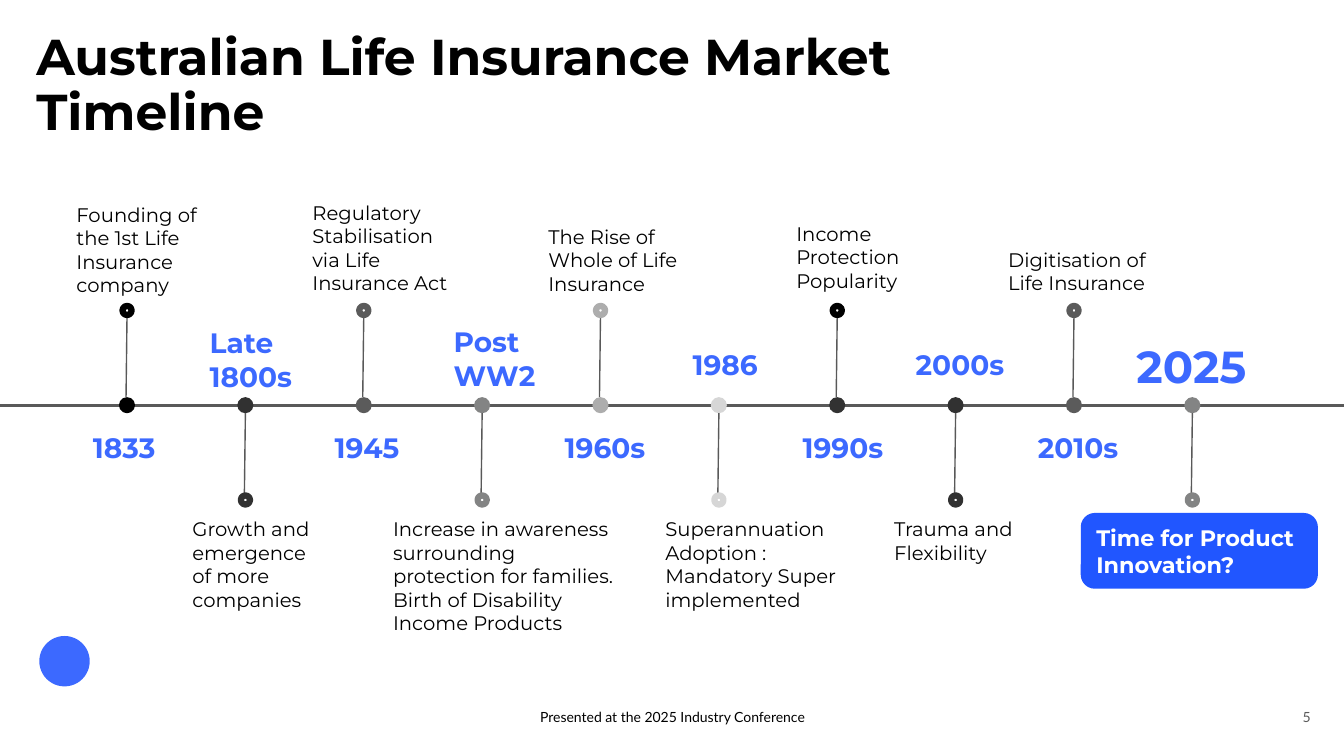
from lxml import etree
from pptx import Presentation
from pptx.dml.color import RGBColor
from pptx.enum.shapes import MSO_CONNECTOR, MSO_SHAPE
from pptx.enum.text import MSO_ANCHOR, PP_ALIGN
from pptx.oxml.ns import qn
from pptx.util import Inches, Pt

STRAIGHT = MSO_CONNECTOR.STRAIGHT
OVAL, ROUNDED = MSO_SHAPE.OVAL, MSO_SHAPE.ROUNDED_RECTANGLE
TOP, MIDDLE, BOTTOM = MSO_ANCHOR.TOP, MSO_ANCHOR.MIDDLE, MSO_ANCHOR.BOTTOM
LEFT, CENTER, RIGHT = PP_ALIGN.LEFT, PP_ALIGN.CENTER, PP_ALIGN.RIGHT

BLUE, BUTTON_BLUE, LINE_GRAY = "3C69FF", "2156FF", "595959"
TITLE = "Australian Life Insurance Market Timeline"
FOOTER = "Presented at the 2025 Industry Conference"
PAGE_NUMBER = "5"
CALLOUT = "Time for Product Innovation?"

MARKERS = [
    ("000000", "000000"), ("313131", "313131"), ("5B5B5B", "5B5B5B"),
    ("838484", "838484"), ("ADADAD", "ADADAD"), ("D6D6D6", "D6D6D6"),
    ("323232", "000000"), ("313131", "313131"), ("5B5B5B", "5B5B5B"),
    ("838484", "838484"),
]
DATES = [
    ("1833", (0.77, 4.22, 0.87, 0.44), RIGHT, 20),
    ("Late\n1800s", (1.98, 3.18, 1.09, 0.77), LEFT, 20),
    ("1945", (3.17, 4.22, 0.89, 0.44), RIGHT, 20),
    ("Post\nWW2", (4.4, 3.17, 1.02, 0.77), LEFT, 20),
    ("1960s", (5.44, 4.22, 1.06, 0.44), RIGHT, 20),
    ("1986", (6.77, 3.4, 0.89, 0.44), LEFT, 20),
    ("1990s", (7.8, 4.22, 1.06, 0.44), RIGHT, 20),
    ("2000s", (8.9, 3.4, 1.16, 0.44), RIGHT, 20),
    ("2010s", (10.12, 4.22, 1.07, 0.44), RIGHT, 20),
    ("2025", (11.06, 3.31, 1.4, 0.64), RIGHT, 32),
]
EVENTS = [
    ("Founding of the 1st Life Insurance company", (0.66, 1.96, 1.6, 1.04)),
    ("Growth and emergence of more companies", (1.81, 5.08, 1.52, 1.04)),
    ("Regulatory Stabilisation via Life Insurance Act", (3, 1.94, 1.6, 1.04)),
    ("Increase in awareness surrounding protection for families.\n"
     "Birth of Disability Income Products", (3.8, 5.08, 2.46, 1.28)),
    ("The Rise of Whole of Life Insurance", (5.34, 2.18, 1.6, 0.81)),
    ("Superannuation Adoption : Mandatory Super implemented",
     (6.5, 5.08, 1.99, 1.04)),
    ("Income Protection Popularity", (7.8, 2.15, 1.6, 0.81)),
    ("Trauma and Flexibility", (8.77, 5.08, 1.38, 0.57)),
    ("Digitisation of Life Insurance", (9.9, 2.41, 1.6, 0.57)),
]

SLIDE_WIDTH, SLIDE_HEIGHT = 13.33, 7.5
AXIS_Y = 4.02
FIRST_X, STEP = 1.26, 1.174
DOT_SIZE, RING_SIZE = 0.16, 0.09
RING_OFFSET = 0.94

presentation = Presentation()
presentation.slide_width = Inches(SLIDE_WIDTH)
presentation.slide_height = Inches(SLIDE_HEIGHT)
slide = presentation.slides.add_slide(presentation.slide_layouts[5])


def color(value):
    return RGBColor.from_string(value)


def box(area):
    return [Inches(length) for length in area]


def write(shape, text, size=14, font="Montserrat", fill="000000", bold=False,
          align=LEFT, anchor=TOP, wrap=True, inset=None, spacing=None):
    frame = shape.text_frame
    frame.text = text
    frame.word_wrap = wrap
    frame.vertical_anchor = anchor
    if inset is not None:
        frame.margin_left = frame.margin_right = Inches(inset)
        frame.margin_top = frame.margin_bottom = Inches(inset)
    for paragraph in frame.paragraphs:
        paragraph.alignment = align
        paragraph.line_spacing = spacing
        for run in paragraph.runs:
            run.font.name = font
            run.font.size = Pt(size)
            run.font.bold = bold
            run.font.color.rgb = color(fill)


def add_text(text, area, **style):
    write(slide.shapes.add_textbox(*box(area)), text, **style)


def add_shape(kind, area, fill, line=None, width=0):
    shape = slide.shapes.add_shape(kind, *box(area))
    shape.shadow.inherit = False
    shape.fill.solid()
    shape.fill.fore_color.rgb = color(fill)
    if line:
        shape.line.color.rgb = color(line)
        shape.line.width = Pt(width)
    else:
        shape.line.fill.background()
    return shape


def add_circle(x, y, size, fill, **outline):
    add_shape(OVAL, (x - size / 2, y - size / 2, size, size), fill, **outline)


def add_line(start, end, width):
    connector = slide.shapes.add_connector(STRAIGHT, *box(start + end))
    connector.line.color.rgb = color(LINE_GRAY)
    connector.line.width = Pt(width)
    etree.SubElement(connector._element.spPr, qn("a:effectLst"))


title = slide.shapes.title
title.left, title.top, title.width, title.height = box((0.36, 0.32, 9.38, 1.35))
write(title, TITLE, size=36, bold=True, inset=0, spacing=0.9)

add_circle(0.64, 6.56, 0.5, BLUE)
add_text(PAGE_NUMBER, (12.54, 7, 0.46, 0.2), size=10, font="Lato",
         fill="5B5B5B", align=RIGHT, anchor=BOTTOM, inset=0)
add_text(FOOTER, (4.42, 7, 4.5, 0.2), size=10, font="Lato",
         align=CENTER, anchor=BOTTOM, inset=0)

add_line((0, AXIS_Y), (SLIDE_WIDTH, AXIS_Y), 2.25)
for index, (dot_color, ring_color) in enumerate(MARKERS):
    x = FIRST_X + index * STEP
    direction = 1 if index % 2 else -1
    ring_y = AXIS_Y + direction * RING_OFFSET
    dot_edge = AXIS_Y + direction * DOT_SIZE / 2
    ring_edge = ring_y - direction * RING_SIZE / 2
    add_circle(x, AXIS_Y, DOT_SIZE, dot_color)
    add_line((x - 0.01, max(dot_edge, ring_edge)),
             (x, min(dot_edge, ring_edge)), 1)
    add_circle(x, ring_y, RING_SIZE, "FFFFFF", line=ring_color, width=4.5)

for text, area, align, size in DATES:
    add_text(text, area, size=size, fill=BLUE, bold=True, align=align, wrap=False)
for text, area in EVENTS:
    add_text(text, area)

callout = add_shape(ROUNDED, (10.74, 5.11, 2.31, 0.71), BUTTON_BLUE,
                    line=BUTTON_BLUE, width=3)
write(callout, CALLOUT, size=16, fill="FFFFFF", bold=True, anchor=MIDDLE)

presentation.save("out.pptx")
